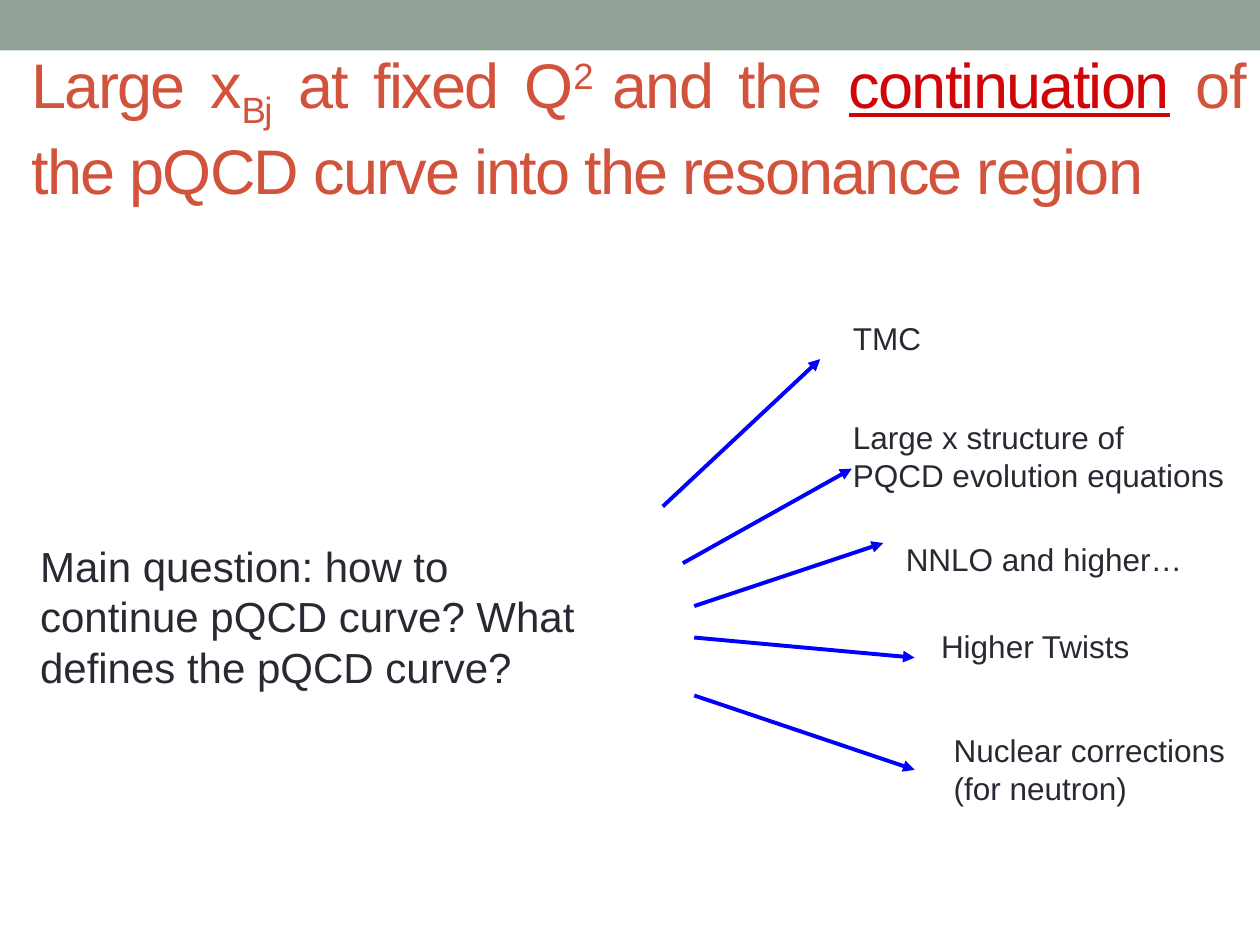
from lxml import etree
from pptx import Presentation
from pptx.dml.color import RGBColor
from pptx.enum.shapes import MSO_CONNECTOR, MSO_SHAPE
from pptx.enum.text import MSO_ANCHOR, MSO_AUTO_SIZE, PP_ALIGN
from pptx.oxml.ns import qn
from pptx.util import Emu, Pt

PX = 9144  # EMU per px, 100 px to the inch
COLORS = {"bar": "93A299", "title": "D2533C", "accent": "CF0507",
          "text": "292934", "arrow": "0000FF"}


def add_span(para, text, size, color):
    span = para.add_run()
    span.text = text
    span.font.name = "Arial"
    span.font.size = Pt(size)
    span.font.color.rgb = RGBColor.from_string(COLORS[color])
    return span


def add_text(slide, bounds, lines, size, wrap):
    box = slide.shapes.add_textbox(*[Emu(n * PX) for n in bounds])
    frame = box.text_frame
    frame.word_wrap = wrap
    frame.auto_size = MSO_AUTO_SIZE.SHAPE_TO_FIT_TEXT
    for index, line in enumerate(lines):
        para = frame.add_paragraph() if index else frame.paragraphs[0]
        add_span(para, line, size, "text")


deck = Presentation()
deck.slide_width, deck.slide_height = Emu(1000 * PX), Emu(750 * PX)
page = deck.slides.add_slide(deck.slide_layouts[5])

# Top bar
bar = page.shapes.add_shape(MSO_SHAPE.RECTANGLE, 0, 0, Emu(1000 * PX), Emu(40 * PX))
bar.shadow.inherit = False
bar.fill.solid()
bar.fill.fore_color.rgb = RGBColor.from_string(COLORS["bar"])
bar.line.fill.background()

# Title: text, colour, baseline shift in thousandths of a percent
title = page.shapes.title
title.left, title.top, title.width, title.height = [Emu(n * PX) for n in (15, 46, 983, 108)]
frame = title.text_frame
frame.word_wrap = True
frame.auto_size = MSO_AUTO_SIZE.NONE
frame.vertical_anchor = MSO_ANCHOR.MIDDLE
para = frame.paragraphs[0]
para.alignment = PP_ALIGN.JUSTIFY
for text, color, baseline in [
    ("Large x", "title", 0),
    ("Bj", "title", -25000),
    (" at fixed Q", "title", 0),
    ("2 ", "title", 30000),
    ("and the ", "title", 0),
    ("continuation", "accent", 0),
    (" of the pQCD curve into the resonance region", "title", 0),
]:
    span = add_span(para, text, 36, color)
    span.font.underline = color == "accent"
    properties = span.font._element if hasattr(span.font, "_element") else span._r.get_or_add_rPr()
    properties.set("spc", "-100")
    properties.set("baseline", str(baseline))

# Main question
add_text(page, (22, 424, 463, 131),
         ["Main question: how to continue pQCD curve? What defines the pQCD curve?"], 24, True)

# Effects, each with the arrow that leads to it
for bounds, lines, start, end in [
    ((667, 248, 75, 40), ["TMC"], (526, 402), (651, 285)),
    ((667, 327, 318, 71), ["Large x structure of", "PQCD evolution equations"],
     (542, 447), (676, 372)),
    ((709, 424, 242, 40), ["NNLO and higher…"], (551, 481), (701, 431)),
    ((737, 493, 171, 40), ["Higher Twists"], (551, 506), (726, 522)),
    ((747, 575, 238, 71), ["Nuclear corrections", "(for neutron)"],
     (551, 552), (726, 611)),
]:
    add_text(page, bounds, lines, 18, False)
    arrow = page.shapes.add_connector(MSO_CONNECTOR.STRAIGHT,
                                      *[Emu(n * PX) for n in start + end])
    arrow.line.color.rgb = RGBColor.from_string(COLORS["arrow"])
    arrow.line.width = Pt(2.25)
    outline = arrow.line._get_or_add_ln()
    etree.SubElement(outline, qn("a:tailEnd"), type="triangle")
    etree.SubElement(arrow._element.spPr, qn("a:effectLst"))

deck.save("out.pptx")
